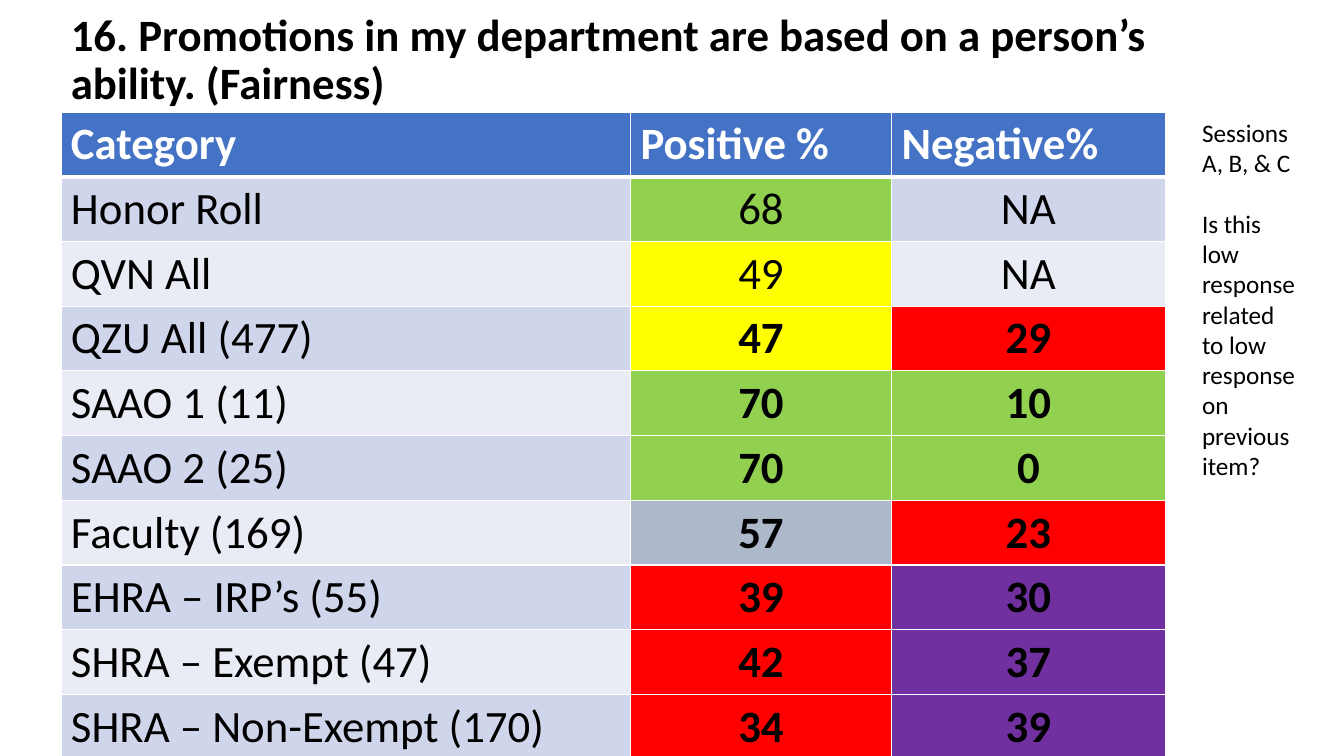
from lxml.etree import SubElement
from pptx import Presentation
from pptx.dml.color import RGBColor
from pptx.enum.text import MSO_ANCHOR as Anchor, PP_ALIGN as Align
from pptx.oxml.ns import qn
from pptx.util import Pt

GREEN, YELLOW, RED = "92D050", "FFFF00", "FF0000"
GRAY, PURPLE, BLUE = "ADB9CA", "7030A0", "4472C4"
BANDS = ["CFD5EA", "E9EBF5"]

HEADER = ["Category", "Positive %", "Negative%"]
# Category, positive value and fill, negative value and fill (None: band), bold values
RESULTS = [
    ("Honor Roll", "68", GREEN, "NA", None, False),
    ("QVN All", "49", YELLOW, "NA", None, False),
    ("QZU All (477)", "47", YELLOW, "29", RED, True),
    ("SAAO 1 (11)", "70", GREEN, "10", GREEN, True),
    ("SAAO 2 (25)", "70", GREEN, "0", GREEN, True),
    ("Faculty (169)", "57", GRAY, "23", RED, True),
    ("EHRA – IRP’s (55)", "39", RED, "30", PURPLE, True),
    ("SHRA – Exempt (47)", "42", RED, "37", PURPLE, True),
    ("SHRA – Non-Exempt (170)", "34", RED, "39", PURPLE, True),
]


def rgb(value):
    return RGBColor.from_string(value)


def write(p, text, size=32, color="000000", bold=False, align=Align.LEFT,
          line=None, before=0, font="Calibri"):
    p.alignment = align
    p.space_before = Pt(before)
    if line:
        p.line_spacing = line
    r = p.add_run()
    r.text = text
    r.font.name = font
    r.font.size = Pt(size)
    r.font.bold = bold
    r.font.color.rgb = rgb(color)


class SlideBuilder:
    def __init__(self, slide, border="FFFFFF"):
        self.slide = slide
        self.border = border

    def text(self, x, y, w, h, paragraphs, anchor=Anchor.TOP):
        """Add a text box from (text, format) pairs."""
        tf = self.slide.shapes.add_textbox(Pt(x), Pt(y), Pt(w), Pt(h)).text_frame
        tf.word_wrap = True
        tf.vertical_anchor = anchor
        for i, (text, style) in enumerate(paragraphs):
            write(tf.add_paragraph() if i else tf.paragraphs[0], text, **style)

    def table(self, x, y, widths, row_height, rows):
        """Add a table whose cells are (text, fill, format) triples."""
        table = self.slide.shapes.add_table(
            len(rows), len(widths), Pt(x), Pt(y),
            Pt(sum(widths)), Pt(row_height * len(rows))).table
        for column, width in zip(table.columns, widths):
            column.width = Pt(width)
        for i, row in enumerate(rows):
            table.rows[i].height = Pt(row_height)
            for j, (text, fill, style) in enumerate(row):
                cell = table.cell(i, j)
                self.borders(cell, top=3 if i == 1 else 1, bottom=3 if i == 0 else 1)
                cell.fill.solid()
                cell.fill.fore_color.rgb = rgb(fill)
                write(cell.text_frame.paragraphs[0], text, **style)

    def borders(self, cell, top, bottom):
        tc_pr = cell._tc.get_or_add_tcPr()
        for side, width in (("L", 1), ("R", 1), ("T", top), ("B", bottom)):
            ln = SubElement(tc_pr, qn(f"a:ln{side}"), w=str(Pt(width)))
            fill = SubElement(ln, qn("a:solidFill"))
            SubElement(fill, qn("a:srgbClr"), val=self.border)


def result_rows():
    rows = [[(name, BLUE, dict(color="FFFFFF", bold=True)) for name in HEADER]]
    for i, (category, pos, pos_fill, neg, neg_fill, bold) in enumerate(RESULTS):
        band = BANDS[i % 2]
        value = dict(bold=bold, align=Align.CENTER)
        rows.append([(category, band, {}), (pos, pos_fill, value),
                     (neg, neg_fill or band, value)])
    return rows


def main():
    prs = Presentation()
    prs.slide_width, prs.slide_height = Pt(960), Pt(540)
    s = SlideBuilder(prs.slides.add_slide(prs.slide_layouts[6]))
    s.text(43.5, 18, 873, 51, [
        ("16. Promotions in my department are based on a person’s ability. (Fairness)",
         dict(bold=True, line=0.9))], anchor=Anchor.MIDDLE)
    s.table(43.5, 80, [406.8, 186.6, 195.4], 46.25, result_rows())
    s.text(851.5, 80, 85, 269, [
        ("Sessions A, B, & C", dict(size=18)),
        ("Is this low response related to low response on previous item?",
         dict(size=18, before=22))])
    prs.save("out.pptx")


if __name__ == "__main__":
    main()
